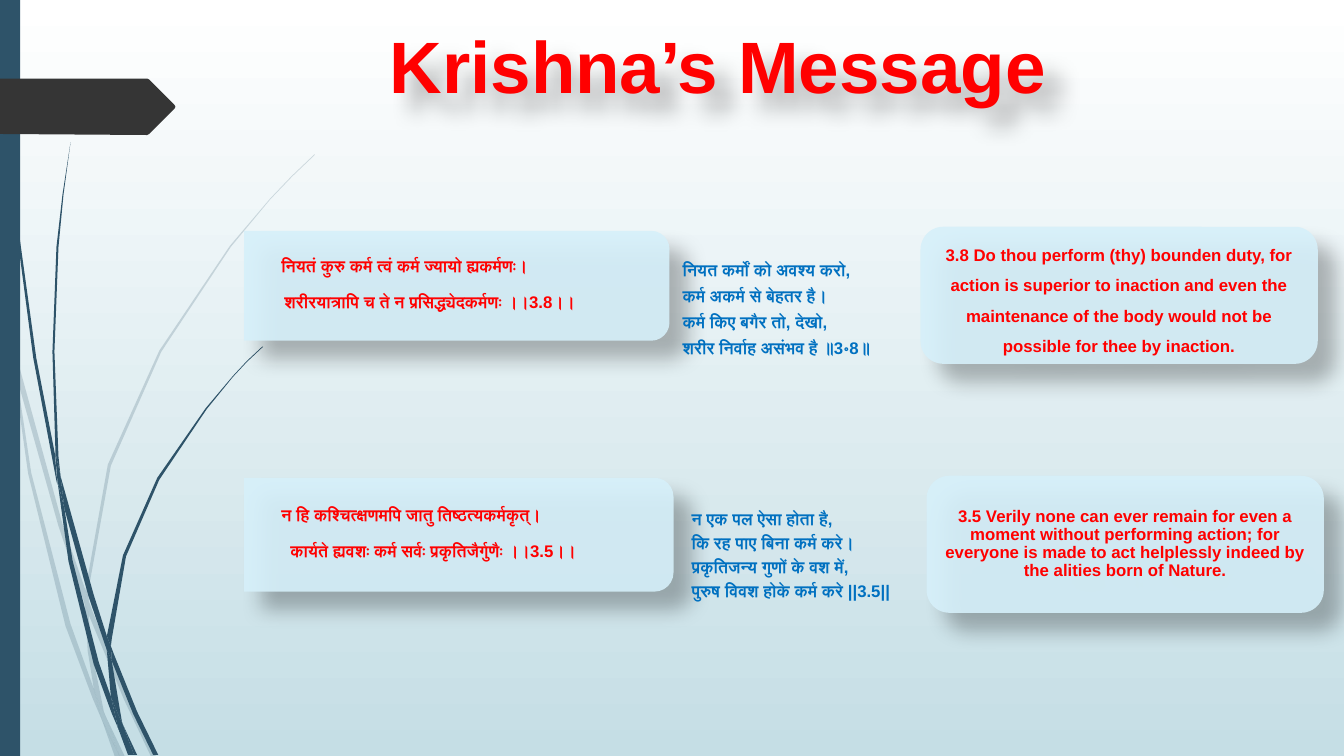
from lxml.etree import SubElement as Sub
from pptx import Presentation
from pptx.dml.color import RGBColor
from pptx.enum.shapes import MSO_SHAPE as Form
from pptx.enum.text import MSO_ANCHOR as Anchor, PP_ALIGN as Align
from pptx.oxml.ns import qn
from pptx.util import Inches, Pt

RED, BLUE, NAVY, CARD = "FF0000", "0070C0", "2E5369", "D6F0FA"

PALE = [
    [(.11, 3.5), (.09, 3.22), (0, 2.82), (0, 2.99), (.1, 3.44)],
    [(.58, 5.22), (.84, 5.99), (.85, 5.86), (.62, 5.2), (.14, 3.45), (.17, 3.76)],
    [(.92, 6.07), (.88, 5.96), (.88, 6.1), (1.23, 6.94), (1.5, 7.51), (1.55, 7.51),
     (1.27, 6.92)],
    [(1.19, 7.51), (1.24, 7.51), (1.05, 7.11)],
    [(.93, 6.83), (.7, 6.19), (.31, 4.69), (.17, 3.76), (.11, 3.5), (.28, 4.7),
     (.65, 6.21), (.92, 6.93), (1.01, 7.14), (.99, 7.07)],
    [(.84, 5.99), (.87, 6.46), (.93, 6.83), (.96, 6.92), (1.05, 7.11), (1.03, 7.06),
     (.91, 6.46), (.88, 6.1), (.88, 6.08)],
    [(.88, 5.84), (1.1, 4.62), (1.6, 3.49), (2.29, 2.45), (2.68, 1.98), (2.9, 1.75),
     (3.12, 1.54), (3.12, 1.53), (2.89, 1.75), (2.68, 1.97), (2.28, 2.44),
     (1.58, 3.48), (1.07, 4.61), (.85, 5.84), (.85, 5.86), (.88, 5.96)],
    [(1.01, 7.14), (1.14, 7.51), (1.19, 7.51)],
    [(.88, 6.08), (.88, 6.1), (.88, 5.96), (.85, 5.86), (.84, 5.99)],
    [(.96, 6.92), (.93, 6.83), (.99, 7.07), (1.01, 7.14), (1.19, 7.51), (1.05, 7.11)],
]
DARK = [
    [(.07, 1.1), (.17, 2.33), (.33, 3.55), (.56, 4.77), (.57, 4.81), (.55, 4.57),
     (.55, 4.53), (.36, 3.55), (.19, 2.32), (.08, 1.09), (.05, .48), (.04, 0),
     (.03, 0), (.04, .48)],
    [(.88, 5.92), (1.06, 6.45), (1.06, 6.33), (1.06, 6.31), (.93, 5.9), (.6, 4.72),
     (.64, 5.05)],
    [(1.13, 6.49), (1.1, 6.41), (1.11, 6.56), (1.32, 7.08), (1.52, 7.49),
     (1.57, 7.49), (1.36, 7.06)],
    [(1.1, 6.91), (.98, 6.57), (.72, 5.56), (.64, 5.05), (.57, 4.77), (.68, 5.57),
     (.93, 6.59), (1.11, 7.08), (1.17, 7.22), (1.16, 7.17)],
    [(.6, 4.72), (.58, 4.53), (.54, 3.49), (.58, 2.45), (.63, 1.93), (.7, 1.41),
     (.62, 1.93), (.56, 2.45), (.52, 3.49), (.55, 4.49)],
    [(1.33, 7.49), (1.36, 7.49), (1.22, 7.19)],
    [(.57, 4.77), (.64, 5.05), (.6, 4.72), (.55, 4.49), (.55, 4.53)],
    [(1.11, 6.33), (1.25, 5.52), (1.58, 4.76), (2.05, 4.06), (2.31, 3.74),
     (2.45, 3.59), (2.61, 3.44), (2.6, 3.44), (2.45, 3.58), (2.31, 3.73),
     (2.04, 4.05), (1.56, 4.74), (1.22, 5.51), (1.06, 6.31), (1.1, 6.41)],
    [(1.17, 7.22), (1.27, 7.49), (1.31, 7.49)],
    [(1.06, 6.45), (1.1, 6.91), (1.16, 7.06), (1.22, 7.19), (1.21, 7.16),
     (1.11, 6.56), (1.09, 6.51)],
    [(1.06, 6.45), (1.09, 6.51), (1.11, 6.56), (1.1, 6.41), (1.06, 6.31), (1.06, 6.33)],
    [(1.16, 7.06), (1.1, 6.91), (1.16, 7.17), (1.17, 7.22), (1.3, 7.49), (1.33, 7.49),
     (1.22, 7.19)],
]
ROWS = [
    dict(verse=(2.42, 2.29, 4.22, 1.09), stanza=(6.72, 2.29, 2.41, 1.29),
         card=(9.13, 2.25, 3.94, 1.36), left=(.1, .13), pad=.05, gap=1.0, lead=1.5,
         lines=["नियतं कुरु कर्म त्वं कर्म ज्यायो ह्यकर्मणः।",
                "शरीरयात्रापि च ते न प्रसिद्ध्येदकर्मणः ।।3.8।।"],
         hindi=["नियत कर्मों को अवश्य करो,", "कर्म अकर्म से बेहतर है।",
                "कर्म किए बगैर तो, देखो,", "शरीर निर्वाह असंभव है ॥3॰8॥"],
         english="3.8 Do thou perform (thy) bounden duty, for action is superior to "
                 "inaction and even the maintenance of the body would not be possible "
                 "for thee by inaction."),
    dict(verse=(2.42, 4.74, 4.26, 1.13), stanza=(6.78, 4.75, 2.6, 1.28),
         card=(9.19, 4.72, 3.94, 1.36), left=(.1, .19), pad=.08, gap=.9, lead=.9,
         lines=["न हि कश्चित्क्षणमपि जातु तिष्ठत्यकर्मकृत्।",
                "कार्यते ह्यवशः कर्म सर्वः प्रकृतिजैर्गुणैः ।।3.5।।"],
         hindi=["न एक पल ऐसा होता है,", "कि रह पाए बिना कर्म करे।",
                "प्रकृतिजन्य गुणों के वश में,", "पुरुष विवश होके कर्म करे ||3.5||"],
         english="3.5 Verily none can ever remain for even a moment without performing "
                 "action; for everyone is made to act helplessly indeed by the alities "
                 "born of Nature."),
]


def tint(hue):
    """Turn a hex string into a colour."""
    return RGBColor.from_string(hue)


def paint(shape, hue, alpha=100):
    """Fill a shape flat, without line or shadow."""
    shape.shadow.inherit = False
    shape.line.fill.background()
    shape.fill.solid()
    shape.fill.fore_color.rgb = tint(hue)
    if alpha < 100:
        node = shape._element.spPr.find(qn("a:solidFill"))[0]
        Sub(node, qn("a:alpha"), val=str(alpha * 1000))


def shade(shape):
    """Cast a soft black shadow down and to the right."""
    shape.shadow.inherit = False
    fx = shape._element.spPr.find(qn("a:effectLst"))
    out = Sub(fx, qn("a:outerShdw"), blurRad=str(Pt(15)), dist=str(Pt(18)),
              dir="2700000", algn="tl", rotWithShape="0")
    black = Sub(out, qn("a:srgbClr"), val="000000")
    Sub(black, qn("a:alpha"), val="30000")


def frame(shape, *pads):
    """Set wrap, middle anchor and the four insets."""
    body = shape.text_frame
    body.word_wrap = True
    body.vertical_anchor = Anchor.MIDDLE
    sides = [Inches(pad) for pad in pads]
    body.margin_left, body.margin_top, body.margin_right, body.margin_bottom = sides
    return body


def write(body, lines, hue, size=12, align=Align.LEFT, lead=.9, after=0):
    """Write bold lines, one paragraph and run each."""
    for at, line in enumerate(lines):
        par = body.add_paragraph() if at else body.paragraphs[0]
        par.alignment, par.line_spacing, par.space_after = align, lead, Pt(after)
        run = par.add_run()
        run.text = line
        font = run.font
        font.name, font.size, font.bold = "Arial", Pt(size), True
        font.color.rgb = tint(hue)


def trace(shapes, dots, hue, alpha=100):
    """Draw a closed outline through points in inches."""
    first, *rest = [(Inches(x), Inches(y)) for x, y in dots]
    pen = shapes.build_freeform(*first)
    pen.add_line_segments(rest, close=True)
    paint(pen.convert_to_shape(), hue, alpha)


def edge(shapes, x, y, w, h):
    """Draw the reeds, the left bar and the arrow tag."""
    for reeds, alpha in ((PALE, 20), (DARK, 100)):
        for reed in reeds:
            trace(shapes, [(x + a, y + b) for a, b in reed], NAVY, alpha)
    bar = shapes.add_shape(Form.RECTANGLE, *map(Inches, (x, y, w, h)))
    paint(bar, NAVY)
    top, mid, low = y + .78, y + 1.06, y + 1.34
    trace(shapes, [(x, top), (x + 1.46, top), (x + 1.48, top + .01),
                   (x + 1.73, mid - .02), (x + 1.74, mid), (x + 1.73, mid + .02),
                   (x + 1.48, low - .01), (x + 1.46, low), (x, low - .01)], "353535")


def head(title, x, y, w, h):
    """Place the title."""
    title.left, title.top, title.width, title.height = map(Inches, (x, y, w, h))
    write(frame(title, .1, .05, .1, .13), ["Krishna’s Message"], RED, 52,
          Align.CENTER, 1)
    shade(title)


def verse(shapes, row, x, y, w, h):
    """Draw the Sanskrit panel, rounded on the right."""
    spot = x + (w - h) / 2, y + (h - w) / 2, h, w
    panel = shapes.add_shape(Form.ROUND_2_SAME_RECTANGLE, *map(Inches, spot))
    panel.rotation = 90
    paint(panel, CARD, 90)
    shade(panel)
    box = shapes.add_textbox(*map(Inches, (x, y + .05, w - .05, h - .1)))
    body = frame(box, .27, .14, .27, .15)
    write(body, row["lines"], RED)
    body.paragraphs[1].space_before = Pt(12.5)
    for par, left in zip(body.paragraphs, row["left"]):
        par._p.get_or_add_pPr().set("marL", str(Inches(left)))


def stanza(shapes, row, x, y, w, h):
    """Write the Hindi lines."""
    box = shapes.add_textbox(*map(Inches, (x, y, w, h)))
    body = frame(box, row["pad"], .28, row["pad"], .03)
    write(body, row["hindi"], BLUE, lead=row["gap"], after=4.2)


def card(shapes, row, x, y, w, h):
    """Draw the English card."""
    box = shapes.add_shape(Form.ROUNDED_RECTANGLE, *map(Inches, (x, y, w, h)))
    paint(box, CARD, 90)
    shade(box)
    write(frame(box, .12, .1, .12, .1), [row["english"]], RED,
          align=Align.CENTER, lead=row["lead"])


def main():
    """Build and save the slide."""
    deck = Presentation()
    deck.slide_width, deck.slide_height = Inches(13.33), Inches(7.5)
    slide = deck.slides.add_slide(deck.slide_layouts[5])
    fill = slide.background.fill
    fill.gradient()
    fill.gradient_angle = 270
    for stop, hue in zip(fill.gradient_stops, ("FFFFFF", "C5DEE5")):
        stop.color.rgb = tint(hue)
    shapes = slide.shapes
    edge(shapes, 0, 0, .2, 7.5)
    head(shapes.title, 2.42, .15, 9.4, 1.05)
    for row in ROWS:
        verse(shapes, row, *row["verse"])
        stanza(shapes, row, *row["stanza"])
        card(shapes, row, *row["card"])
    deck.save("out.pptx")


if __name__ == "__main__":
    main()
